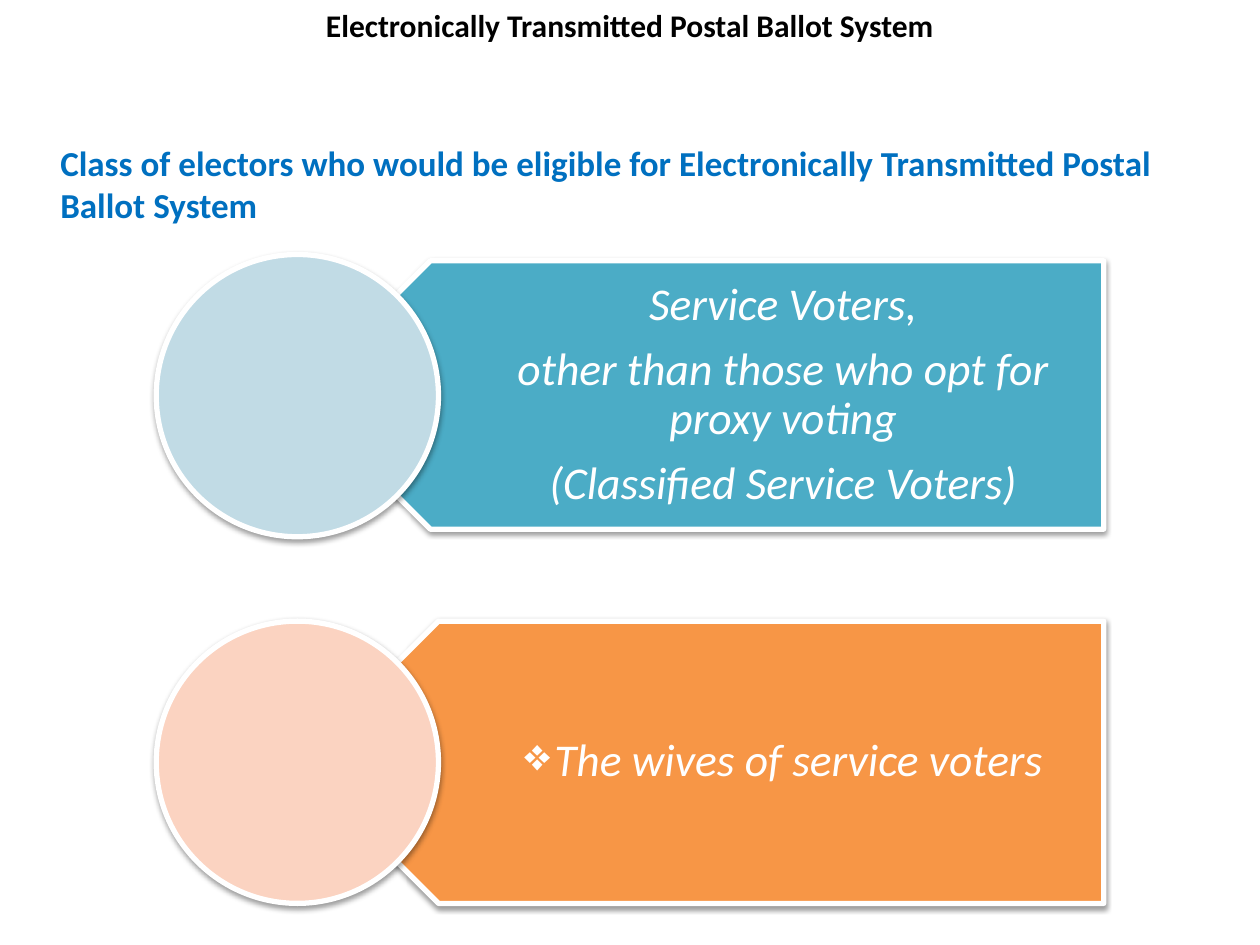
from lxml.etree import SubElement
from pptx import Presentation
from pptx.dml.color import RGBColor
from pptx.enum.shapes import MSO_SHAPE as Preset
from pptx.enum.text import MSO_ANCHOR as Anchor, PP_ALIGN as Align
from pptx.oxml.ns import qn
from pptx.util import Inches, Pt

BLACK = RGBColor(0x00, 0x00, 0x00)
WHITE = RGBColor(0xFF, 0xFF, 0xFF)
BLUE = RGBColor(0x00, 0x70, 0xC0)
TEAL = RGBColor(0x4B, 0xAC, 0xC6)
PALE_TEAL = RGBColor(0xC1, 0xDB, 0xE5)
ORANGE = RGBColor(0xF7, 0x96, 0x46)
PALE_ORANGE = RGBColor(0xFB, 0xD3, 0xC1)

FONT = "Calibri"
DISC_LEFT, DISC_SIZE = 1.24, 2.24
BANNER_RIGHT = 8.76
VOTER_CLASSES = [
    # disc top, banner left, top and height, colours, lines, bullet
    (2.02, 2.35, 2.07, 2.13, TEAL, PALE_TEAL,
     ["Service Voters,", "other than those who opt for proxy voting",
      "(Classified Service Voters)"], None),
    (4.93, 2.36, 4.93, 2.24, ORANGE, PALE_ORANGE,
     ["The wives of service voters"], "❖"),
]


def style_font(paragraph, size, color, bold=False, italic=False):
    for run in paragraph.runs:
        font = run.font
        font.name, font.size, font.color.rgb = FONT, Pt(size), color
        font.bold, font.italic = bold, italic


def add_text_box(slide, left, top, width, height):
    text_frame = slide.shapes.add_textbox(
        Inches(left), Inches(top), Inches(width), Inches(height)).text_frame
    text_frame.word_wrap = True
    return text_frame


def add_heading(slide, position, text, size, color, alignment):
    text_frame = add_text_box(slide, *position)
    text_frame.text = text
    paragraph = text_frame.paragraphs[0]
    paragraph.alignment = alignment
    style_font(paragraph, size, color, bold=True)


def add_soft_shadow(shape):
    shape.shadow.inherit = False
    effects = shape._element.spPr.find(qn("a:effectLst"))
    shadow = SubElement(effects, qn("a:outerShdw"), blurRad=str(Pt(3.1)),
                        dist=str(Pt(1.6)), dir="5400000", rotWithShape="0")
    color = SubElement(shadow, qn("a:srgbClr"), val=str(BLACK))
    SubElement(color, qn("a:alpha"), val="38000")


def add_outlined_shape(slide, preset, left, top, width, height, color):
    shape = slide.shapes.add_shape(
        preset, Inches(left), Inches(top), Inches(width), Inches(height))
    shape.fill.solid()
    shape.fill.fore_color.rgb = color
    shape.line.color.rgb = WHITE
    shape.line.width = Pt(3)
    add_soft_shadow(shape)
    return shape


def add_bullet(paragraph, character):
    properties = paragraph._p.get_or_add_pPr()
    SubElement(properties, qn("a:buChar"), char=character)


def add_banner_text(slide, left, top, width, height, lines, bullet):
    text_frame = add_text_box(slide, left, top, width, height)
    text_frame.vertical_anchor = Anchor.MIDDLE
    text_frame.margin_left, text_frame.margin_right = Inches(0.99), Inches(0.2)
    text_frame.margin_top = text_frame.margin_bottom = Inches(0.11)
    text_frame.text = "\n".join(lines)
    for paragraph in text_frame.paragraphs:
        paragraph.alignment = Align.CENTER
        paragraph.line_spacing = 0.9
        paragraph.space_after = Pt(9)
        if bullet:
            add_bullet(paragraph, bullet)
        style_font(paragraph, 26, WHITE, italic=True)


def add_voter_class(slide, disc_top, left, top, height, color, pale_color,
                    lines, bullet):
    """Draw a banner pointing left, its text, and the disc over its tip."""
    banner = add_outlined_shape(slide, Preset.PENTAGON, left, top,
                                BANNER_RIGHT - left, height, color)
    banner.rotation = 180
    text_left = left + height / 4
    add_banner_text(slide, text_left, top, BANNER_RIGHT - text_left, height,
                    lines, bullet)
    add_outlined_shape(slide, Preset.OVAL, DISC_LEFT, disc_top,
                       DISC_SIZE, DISC_SIZE, pale_color)


def main():
    presentation = Presentation()
    presentation.slide_width = Inches(10)
    presentation.slide_height = Inches(7.5)
    slide = presentation.slides.add_slide(presentation.slide_layouts[6])
    add_heading(slide, (0.38, 1.07, 9.25, 2.63),
                "Class of electors who would be eligible for Electronically "
                "Transmitted Postal Ballot System", 20, BLUE, Align.LEFT)
    add_heading(slide, (0, 0, 10, 0.4),
                "Electronically Transmitted Postal Ballot System",
                18, BLACK, Align.CENTER)
    for voter_class in VOTER_CLASSES:
        add_voter_class(slide, *voter_class)
    presentation.save("out.pptx")


if __name__ == "__main__":
    main()
